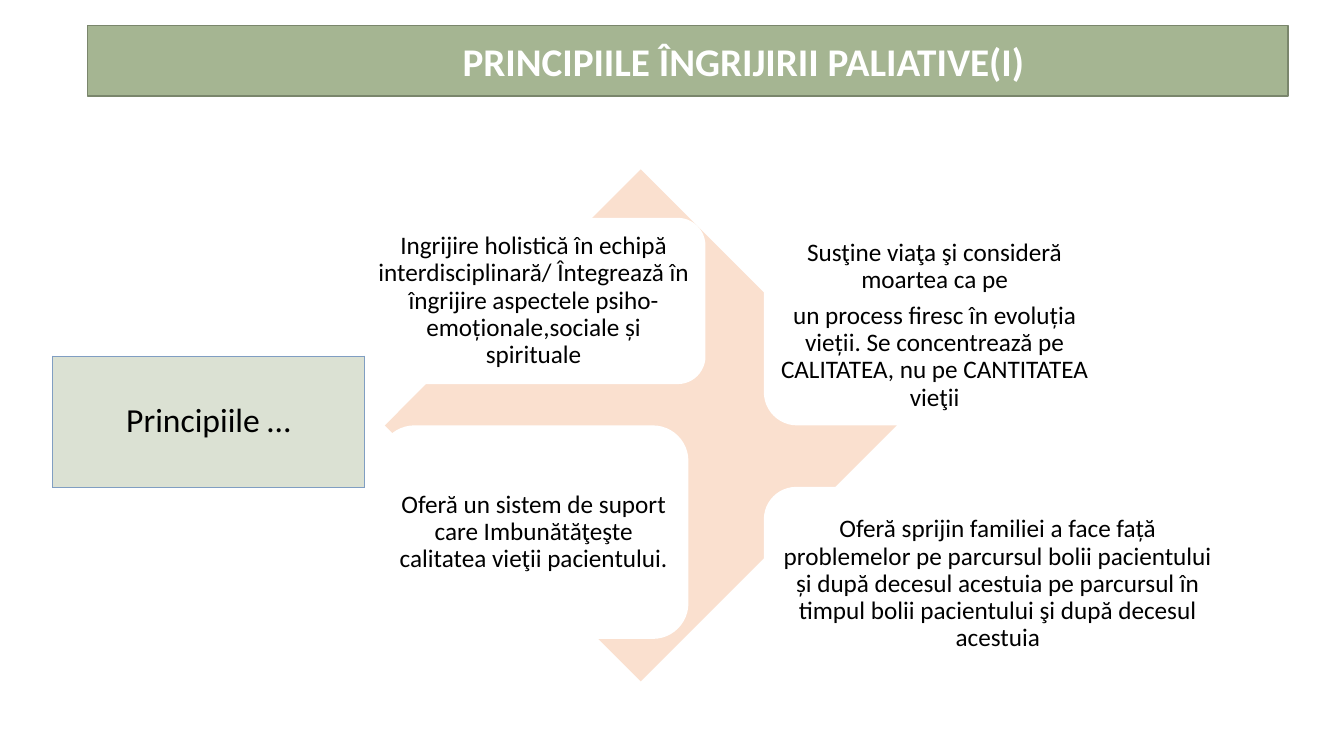
from lxml import etree
from pptx import Presentation
from pptx import util as u
from pptx.dml.color import RGBColor
from pptx.enum import shapes, text
from pptx.oxml.ns import qn

SAGE = RGBColor(0xA5, 0xB5, 0x92)
SAGE_EDGE = RGBColor(0x7A, 0x86, 0x6C)
PALE_SAGE = RGBColor(0xDB, 0xE1, 0xD3)
BLUE_EDGE = RGBColor(0x80, 0x9E, 0xC2)
PEACH = RGBColor(0xFA, 0xE0, 0xCF)
WHITE = RGBColor(0xFF, 0xFF, 0xFF)
BLACK = RGBColor(0, 0, 0)
FONT = "Calibri"

PRINCIPLES = [
    ((-0.58, 1.22, 8.66, 4.19),
     ["Ingrijire holistică în echipă interdisciplinară/ Întegrează în îngrijire "
      "aspectele psiho-emoționale,sociale și spirituale"]),
    ((9.55, 1.42, 8.61, 5.03),
     ["Susţine viaţa şi consideră moartea ca pe",
      "un process firesc în evoluția vieții. Se concentrează pe CALITATEA, "
      "nu pe CANTITATEA vieţii"]),
    ((-0.15, 6.45, 7.8, 5.38),
     ["Oferă un sistem de suport care Imbunătăţeşte calitatea vieţii pacientului."]),
    ((9.55, 8, 11.79, 4.9),
     ["Oferă sprijin familiei a face față problemelor pe parcursul bolii pacientului "
      "și după decesul acestuia pe parcursul în timpul bolii pacientului şi după "
      "decesul acestuia"]),
]


def add_block(slide, kind, box, fill, edge=None):
    block = slide.shapes.add_shape(kind, *(u.Cm(length) for length in box))
    block.shadow.inherit = False
    block.fill.solid()
    block.fill.fore_color.rgb = fill
    if edge is None:
        block.line.fill.background()
    else:
        block.line.color.rgb = edge
        block.line.width = u.Pt(1)
    return block


def style(paragraph, size, color, bold=False):
    paragraph.alignment = text.PP_ALIGN.CENTER
    for run in paragraph.runs:
        run.font.name = FONT
        run.font.size = u.Pt(size)
        run.font.bold = bold
        run.font.color.rgb = color


def add_title(slide, box):
    banner = add_block(slide, shapes.MSO_SHAPE.RECTANGLE, box, SAGE, SAGE_EDGE)
    frame = banner.text_frame
    frame.margin_left = u.Cm(3.05)
    frame.vertical_anchor = text.MSO_ANCHOR.MIDDLE
    frame.text = "PRINCIPIILE ÎNGRIJIRII PALIATIVE(I)"
    style(frame.paragraphs[0], 28, WHITE, bold=True)


def add_principle(slide, box, lines):
    card = add_block(slide, shapes.MSO_SHAPE.ROUNDED_RECTANGLE, box, WHITE)
    frame = card.text_frame
    frame.word_wrap = True
    frame.vertical_anchor = text.MSO_ANCHOR.MIDDLE
    frame.margin_left = frame.margin_right = u.Cm(0.18)
    frame.margin_top = frame.margin_bottom = u.Cm(0.18)
    frame.text = "\n".join(lines)
    for paragraph in frame.paragraphs:
        style(paragraph, 18, BLACK)
        paragraph.line_spacing = 0.9
        paragraph.space_after = u.Pt(6.3)


def add_matrix(slide, box):
    left, top = box[:2]
    add_block(slide, shapes.MSO_SHAPE.DIAMOND, box, PEACH)
    for (dx, dy, width, height), lines in PRINCIPLES:
        add_principle(slide, (left + dx, top + dy, width, height), lines)


def add_label(slide, box):
    grid = slide.shapes.add_table(1, 1, *(u.Cm(length) for length in box)).table
    label = grid.cell(0, 0)
    label.fill.solid()
    label.fill.fore_color.rgb = PALE_SAGE
    label.vertical_anchor = text.MSO_ANCHOR.MIDDLE
    label.text = "Principiile …"
    style(label.text_frame.paragraphs[0], 24, BLACK)
    properties = label._tc.get_or_add_tcPr()
    for position, side in enumerate(("a:lnL", "a:lnR", "a:lnT", "a:lnB")):
        border = etree.Element(qn(side), w=str(u.Pt(0.5)))
        fill = etree.SubElement(border, qn("a:solidFill"))
        etree.SubElement(fill, qn("a:srgbClr"), val=str(BLUE_EDGE))
        properties.insert(position, border)


def main():
    deck = Presentation()
    deck.slide_width, deck.slide_height = u.Cm(33.87), u.Cm(19.05)
    slide = deck.slides.add_slide(deck.slide_layouts[6])
    add_matrix(slide, (9.7, 4.27, 12.9, 12.9))
    add_title(slide, (2.21, 0.64, 30.25, 1.78))
    add_label(slide, (1.32, 8.97, 7.87, 3.3))
    deck.save("out.pptx")


if __name__ == "__main__":
    main()
